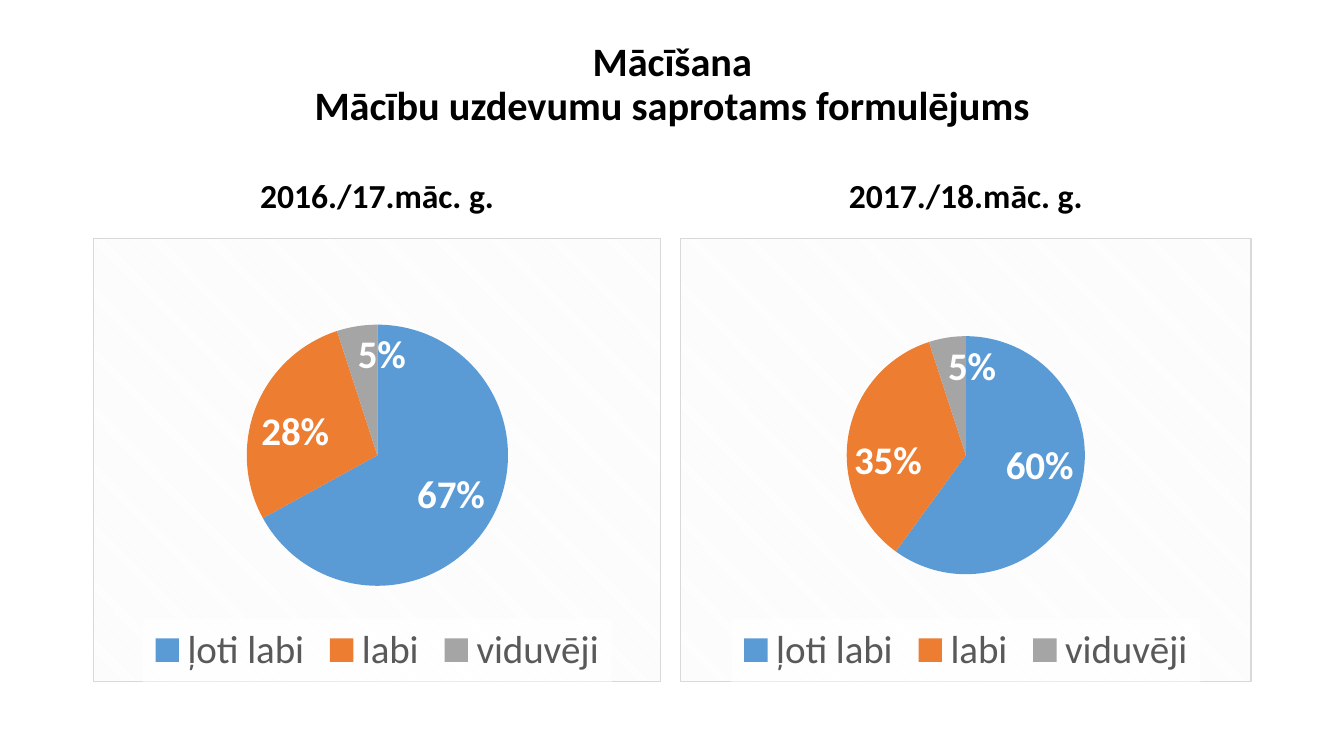
from lxml import etree
from pptx import Presentation
from pptx.chart.data import CategoryChartData
from pptx.dml.color import RGBColor
from pptx.enum.chart import XL_CHART_TYPE as ChartType
from pptx.enum.chart import XL_LABEL_POSITION as LabelPosition
from pptx.enum.chart import XL_LEGEND_POSITION as LegendPosition
from pptx.enum.text import MSO_ANCHOR as Anchor
from pptx.enum.text import PP_ALIGN as Align
from pptx.oxml import parse_xml
from pptx.oxml.ns import nsdecls, qn
from pptx.util import Cm, Pt

BLACK = RGBColor(0x00, 0x00, 0x00)
WHITE = RGBColor(0xFF, 0xFF, 0xFF)
GREY_TEXT = RGBColor(0x59, 0x59, 0x59)
HATCH = RGBColor(0xF2, 0xF2, 0xF2)
BORDER = RGBColor(0xD9, 0xD9, 0xD9)
BLUE = RGBColor(0x5B, 0x9B, 0xD5)
ORANGE = RGBColor(0xED, 0x7D, 0x31)
GREY = RGBColor(0xA5, 0xA5, 0xA5)

RATINGS = {"ļoti labi": BLUE, "labi": ORANGE, "viduvēji": GREY}
YEARS = [
    ("2016./17.māc. g.", 2.34, 14.33, (67, 28, 5), 6.6),
    ("2017./18.māc. g.", 17.14, 14.4, (60, 35, 5), 6.02),
]
HEADING_TOP, HEADING_HEIGHT = 3.71, 1.85
CHART_TOP, CHART_HEIGHT = 5.99, 11.2
PIE_CENTRE = 0.49


class SlideBuilder:
    font_name = "Calibri"

    def __init__(self, page):
        self.page = page

    def style(self, font, size, color, bold=False):
        font.name = self.font_name
        font.size = Pt(size)
        font.bold = bold
        font.color.rgb = color

    def text(self, left, top, width, height, words, size, anchor, before=0):
        box = self.page.shapes.add_textbox(Cm(left), Cm(top), Cm(width), Cm(height))
        frame = box.text_frame
        frame.word_wrap = True
        frame.vertical_anchor = anchor
        para = frame.paragraphs[0]
        for index, line in enumerate(words.splitlines()):
            if index:
                para.add_line_break()
            para.add_run().text = line
        para.alignment = Align.CENTER
        para.line_spacing = 0.9
        para.space_before = Pt(before)
        self.style(para.font, size, BLACK, True)

    def pie(self, left, top, width, height, values, diameter):
        data = CategoryChartData(number_format="0")
        data.categories = list(RATINGS)
        data.add_series("Series 1", values)
        chart = self.page.shapes.add_chart(
            ChartType.PIE, Cm(left), Cm(top), Cm(width), Cm(height), data
        ).chart
        self.style(chart.font, 10, BLACK)
        chart.has_title = False
        chart.has_legend = True
        chart.legend.position = LegendPosition.BOTTOM
        chart.legend.include_in_layout = False
        self.style(chart.legend.font, 28, GREY_TEXT)

        plot = chart.plots[0]
        plot.vary_by_categories = True
        for index, color in enumerate(RATINGS.values()):
            fill = plot.series[0].points[index].format.fill
            fill.solid()
            fill.fore_color.rgb = color
        plot.has_data_labels = True
        labels = plot.data_labels
        labels.show_percentage = True
        labels.show_value = False
        labels.number_format = "0%"
        labels.number_format_is_linked = False
        labels.position = LabelPosition.INSIDE_END
        self.style(labels.font, 28, WHITE, True)

        self.place_pie(chart, diameter / width, diameter / height)
        self.paint(
            chart.font,
            chart._chartSpace,
            f'<a:pattFill prst="dkDnDiag"><a:fgClr><a:srgbClr val="{HATCH}"/></a:fgClr>'
            f'<a:bgClr><a:srgbClr val="{WHITE}"/></a:bgClr></a:pattFill>'
            f'<a:ln w="{Pt(0.75)}"><a:solidFill><a:srgbClr val="{BORDER}"/></a:solidFill></a:ln>',
        )
        self.paint(
            chart.legend.font,
            chart.legend._element,
            f'<a:solidFill><a:srgbClr val="{WHITE}"><a:alpha val="78000"/></a:srgbClr></a:solidFill>',
        )

    def place_pie(self, chart, width, height):
        area = chart._chartSpace.chart.plotArea
        for old in area.findall(qn("c:layout")):
            area.remove(old)
        layout = parse_xml(f"<c:layout {nsdecls('c')}><c:manualLayout/></c:layout>")
        settings = {
            "layoutTarget": "inner",
            "xMode": "edge",
            "yMode": "edge",
            "x": round(0.5 - width / 2, 3),
            "y": round(PIE_CENTRE - height / 2, 3),
            "w": round(width, 3),
            "h": round(height, 3),
        }
        for name, value in settings.items():
            etree.SubElement(layout[0], qn(f"c:{name}")).set("val", str(value))
        area.insert(0, layout)

    def paint(self, font, element, fill):
        properties = parse_xml(f"<c:spPr {nsdecls('c', 'a')}>{fill}</c:spPr>")
        element.find(qn("c:txPr")).addprevious(properties)


def main():
    deck = Presentation()
    deck.slide_width, deck.slide_height = Cm(33.87), Cm(19.05)
    builder = SlideBuilder(deck.slides.add_slide(deck.slide_layouts[6]))
    title = """Mācīšana
Mācību uzdevumu saprotams formulējums"""
    builder.text(2.34, 1.02, 29.21, 2.26, title, 28.8, Anchor.MIDDLE)
    for heading, left, width, values, diameter in YEARS:
        builder.text(left, HEADING_TOP, width, HEADING_HEIGHT, heading, 24, Anchor.BOTTOM, 10)
        builder.pie(left, CHART_TOP, width, CHART_HEIGHT, values, diameter)
    deck.save("out.pptx")


if __name__ == "__main__":
    main()
